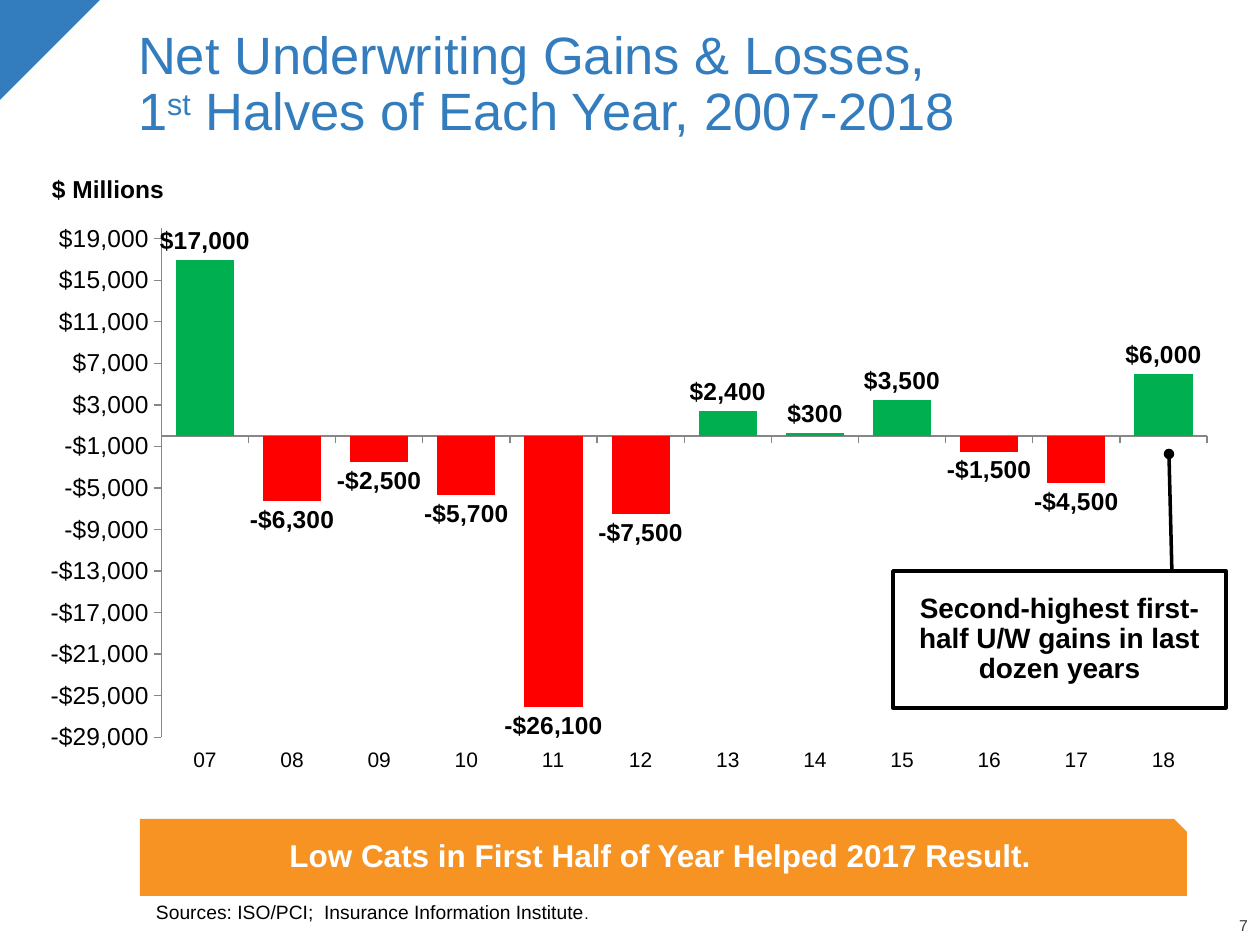
import pptx
import pptx.util
import pptx.chart.data
import pptx.dml.color
import pptx.enum.chart
import pptx.enum.shapes
import pptx.enum.text
import pptx.oxml
import pptx.oxml.ns

# Content
TITLE = ("Net Underwriting Gains & Losses,", "1", "st", " Halves of Each Year, 2007-2018")
UNIT = "$ Millions"
YEARS = ["07", "08", "09", "10", "11", "12", "13", "14", "15", "16", "17", "18"]
GAINS = [17000, -6300, -2500, -5700, -26100, -7500, 2400, 300, 3500, -1500, -4500, 6000]
NOTE = "Second-highest first-half U/W gains in last dozen years"
BANNER = "Low Cats in First Half of Year Helped 2017 Result."
SOURCE = ("Sources: ISO/PCI;  Insurance Information Institute", ".")
PAGE = "7"

HUES = {"blue": "337DBE", "orange": "F69322", "green": "00B050", "red": "FF0000",
        "black": "000000", "white": "FFFFFF", "gray": "404040", "axis": "868686"}
FONT = "Arial"
MONEY = '"$"#,##0'
PLOT = {"x": 0.103, "y": 0.028, "w": 0.887, "h": 0.867}
SCALE = 914400 // 126

Pt = pptx.util.Pt
Align = pptx.enum.text.PP_ALIGN
Anchor = pptx.enum.text.MSO_ANCHOR
Shape = pptx.enum.shapes.MSO_SHAPE
Mark = pptx.enum.chart.XL_TICK_MARK


def px(*nums):
    return [n * SCALE for n in nums]


def hue(name):
    return pptx.dml.color.RGBColor.from_string(HUES[name])


def style(font, size, color="black", bold=False):
    font.name, font.size, font.bold = FONT, Pt(size), bold
    font.color.rgb = hue(color)


def write(shape, parts, size, color="black", bold=False, align=Align.LEFT,
          anchor=Anchor.MIDDLE, inset=(12, 6, 12, 6)):
    """Fill the shape with one paragraph and return it."""
    frame = shape.text_frame
    frame.word_wrap = True
    frame.vertical_anchor = anchor
    (frame.margin_left, frame.margin_top,
     frame.margin_right, frame.margin_bottom) = px(*inset)
    para = frame.paragraphs[0]
    para.alignment, para.line_spacing = align, 0.9
    for part in parts:
        para.add_run().text = part
    style(para.font, size, color, bold)
    return para


def block(kind, box, fill=None, line=None):
    shape = slide.shapes.add_shape(kind, *px(*box))
    shape.shadow.inherit = False
    if fill:
        shape.fill.solid()
        shape.fill.fore_color.rgb = hue(fill)
    else:
        shape.fill.background()
    if line:
        shape.line.color.rgb, shape.line.width = hue(line), Pt(2)
    else:
        shape.line.fill.background()
    return shape


def label(box):
    return slide.shapes.add_textbox(*px(*box))


deck = pptx.Presentation()
deck.slide_width, deck.slide_height = px(1260, 945)
slide = deck.slides.add_slide(deck.slide_layouts[6])

# Corner and page number
block(Shape.RIGHT_TRIANGLE, (-1, 0, 101, 101), "blue").rotation = 90
write(label((1188, 919, 60, 16)), [PAGE], 9, "gray", align=Align.RIGHT,
      anchor=Anchor.BOTTOM, inset=(0, 0, 0, 0))

# Title
head = write(label((126, 24, 1041, 123)), [], 30, "blue")
head.add_run().text = TITLE[0]
head.add_line_break()
for part in TITLE[1:]:
    head.add_run().text = part
head.runs[2].font._element.set("baseline", "30000")

# Sources
foot = write(label((156, 867, 1058, 57)), SOURCE, 11, anchor=Anchor.BOTTOM, inset=(0, 0, 0, 0))
foot.runs[1].font.size = Pt(9)

# Chart
data = pptx.chart.data.CategoryChartData()
data.categories = YEARS
data.add_series("Series 1", GAINS)
chart = slide.shapes.add_chart(pptx.enum.chart.XL_CHART_TYPE.COLUMN_CLUSTERED,
                               *px(40, 212, 1179, 587), data).chart
chart.has_legend = chart.has_title = False
style(chart.font, 12)

plot = chart.plots[0]
plot.gap_width, plot.vary_by_categories = 50, False
bars = plot.series[0]
bars.invert_if_negative = False
bars.format.fill.solid()
bars.format.fill.fore_color.rgb = hue("green")
for spot, gain in enumerate(GAINS):
    if gain < 0:
        fill = bars.points[spot].format.fill
        fill.solid()
        fill.fore_color.rgb = hue("red")

plot.has_data_labels = True
tags = plot.data_labels
tags.show_value = True
tags.number_format, tags.number_format_is_linked = MONEY, False
tags.position = pptx.enum.chart.XL_LABEL_POSITION.OUTSIDE_END
style(tags.font, 14, bold=True)

cats, vals = chart.category_axis, chart.value_axis
cats.tick_label_position = pptx.enum.chart.XL_TICK_LABEL_POSITION.LOW
vals.minimum_scale, vals.maximum_scale, vals.major_unit = -29000, 20000, 4000
vals.tick_labels.number_format = MONEY
vals.tick_labels.number_format_is_linked = False
for axis, size in ((cats, 12), (vals, 14)):
    axis.has_major_gridlines = False
    axis.major_tick_mark, axis.minor_tick_mark = Mark.OUTSIDE, Mark.NONE
    axis.format.line.color.rgb = hue("axis")
    style(axis.tick_labels.font, size)

# Fixed inner plot area
area = chart._chartSpace.chart.plotArea
for old in area.findall(pptx.oxml.ns.qn("c:layout")):
    area.remove(old)
modes = "".join(f'<c:{k}Mode val="edge"/>' for k in "xy")
sizes = "".join(f'<c:{k} val="{v}"/>' for k, v in PLOT.items())
area.insert(0, pptx.oxml.parse_xml(
    f'<c:layout {pptx.oxml.ns.nsdecls("c")}><c:manualLayout>'
    f'<c:layoutTarget val="inner"/>{modes}{sizes}</c:manualLayout></c:layout>'))

# Banner and unit
write(block(Shape.SNIP_1_RECTANGLE, (140, 819, 1047, 77), "orange"), [BANNER], 18,
      "white", True, Align.CENTER, inset=(12, 6, 12, 12))
write(label((40, 171, 185, 39)), [UNIT], 14, bold=True)

# Callout with its pointer
write(block(Shape.RECTANGLE, (893, 571, 333, 137), line="black"), [NOTE], 16,
      bold=True, align=Align.CENTER)
lead = slide.shapes.add_connector(pptx.enum.shapes.MSO_CONNECTOR.STRAIGHT,
                                  *px(1172, 573, 1169, 454))
lead.line.color.rgb, lead.line.width = hue("black"), Pt(2)
space = pptx.oxml.ns.nsdecls("a")
lead.line._get_or_add_ln().append(pptx.oxml.parse_xml(f'<a:tailEnd {space} type="oval"/>'))
lead._element.spPr.append(pptx.oxml.parse_xml(f"<a:effectLst {space}/>"))

deck.save("out.pptx")
